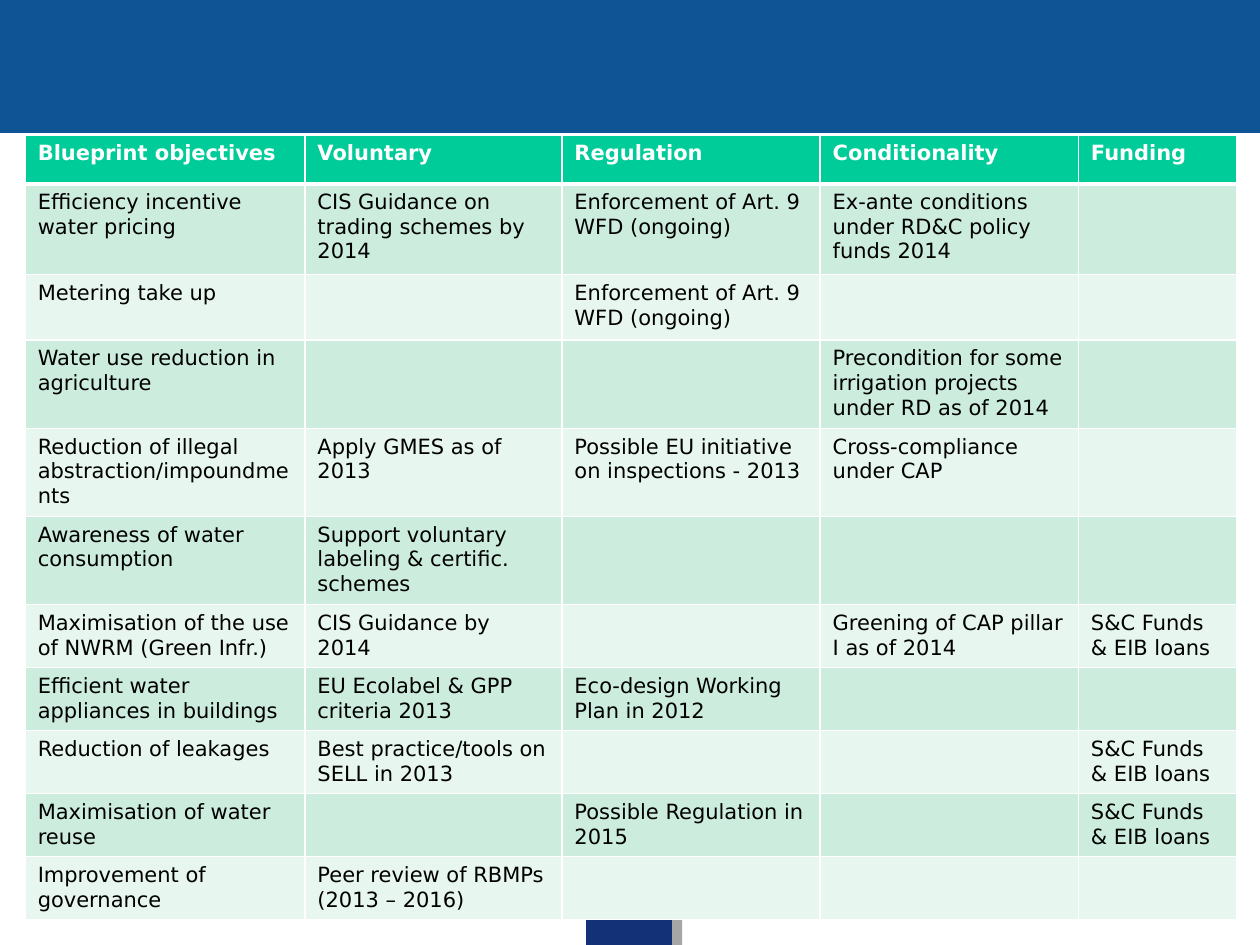
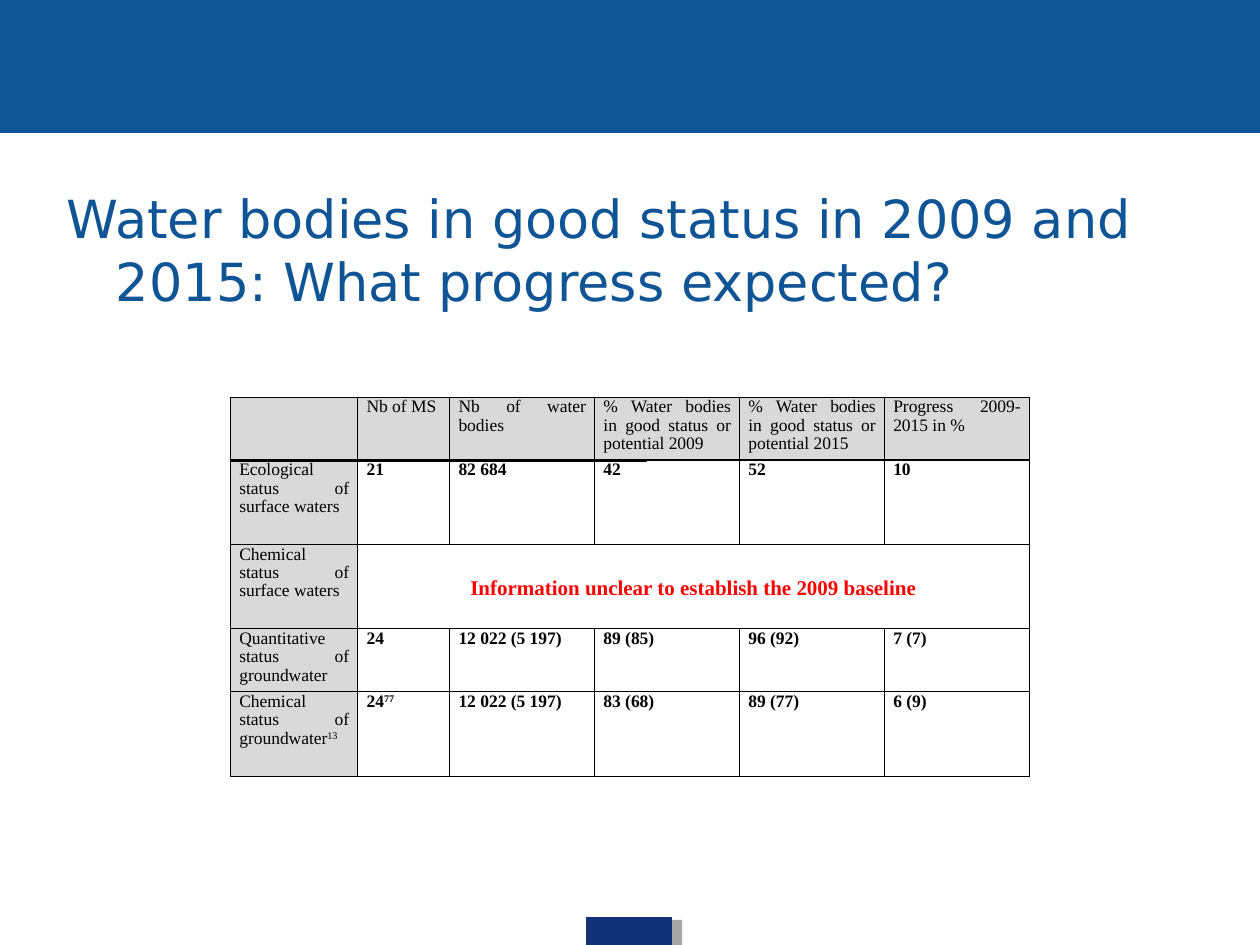
import pptx
import pptx.dml.color
import pptx.enum.shapes
import pptx.enum.text
import pptx.oxml
import pptx.oxml.ns
import pptx.util

Inches = pptx.util.Inches
Align = pptx.enum.text.PP_ALIGN
Anchor = pptx.enum.text.MSO_ANCHOR

COLORS = {
    "band": "0F5494", "footer": "133176", "white": "FFFFFF", "black": "000000",
    "header": "00CC99", "odd_row": "CCECDE", "even_row": "E7F6EF",
    "label": "D9D9D9", "warning": "FF0000",
}
SANS, SERIF = "DejaVu Sans", "Times New Roman"
TITLE_ONLY, BLANK = 5, 6

OBJECTIVE_WIDTHS = [2.22, 2.04, 2.05, 2.05, 1.26]
OBJECTIVE_HEIGHTS = [0.39, 0.72, 0.52] + [0.7] * 3 + [0.5] * 5
OBJECTIVES = [
    ["Blueprint objectives", "Voluntary", "Regulation", "Conditionality", "Funding"],
    ["Efficiency incentive water pricing", "CIS Guidance on trading schemes by 2014",
     "Enforcement of Art. 9 WFD (ongoing)",
     "Ex-ante conditions under RD&C policy funds 2014", ""],
    ["Metering take up", "", "Enforcement of Art. 9 WFD (ongoing)", "", ""],
    ["Water use reduction in agriculture", "", "",
     "Precondition for some irrigation projects under RD as of 2014", ""],
    ["Reduction of illegal abstraction/impoundments", "Apply GMES as of 2013",
     "Possible EU initiative on inspections - 2013", "Cross-compliance under CAP", ""],
    ["Awareness of water consumption",
     "Support voluntary labeling & certific. schemes", "", "", ""],
    ["Maximisation of the use of NWRM (Green Infr.)", "CIS Guidance by 2014", "",
     "Greening of CAP pillar I as of 2014", "S&C Funds & EIB loans"],
    ["Efficient water appliances in buildings", "EU Ecolabel & GPP criteria 2013",
     "Eco-design Working Plan in 2012", "", ""],
    ["Reduction of leakages", "Best practice/tools on SELL in 2013", "", "",
     "S&C Funds & EIB loans"],
    ["Maximisation of water reuse", "", "Possible Regulation in 2015", "",
     "S&C Funds & EIB loans"],
    ["Improvement of governance", "Peer review of RBMPs (2013 – 2016)", "", "", ""],
]

# A caret starts a superscript
STATUS_WIDTHS = [1.01, 0.73] + [1.15] * 4
STATUS_HEIGHTS = [0.5, 0.67, 0.67, 0.5, 0.67]
UNCLEAR_ROW = 2
STATUS = [
    ["", "Nb of MS", "Nb of water bodies",
     "% Water bodies in good status or potential 2009",
     "% Water bodies in good status or potential 2015", "Progress 2009-2015 in %"],
    ["Ecological status of surface waters", "21", "82 684", "42", "52", "10"],
    ["Chemical status of surface waters",
     "Information unclear to establish the 2009 baseline"],
    ["Quantitative status of groundwater", "24", "12 022 (5 197)",
     "89 (85)", "96 (92)", "7 (7)"],
    ["Chemical status of groundwater^13", "24^77", "12 022 (5 197)",
     "83 (68)", "89 (77)", "6 (9)"],
]


def color(name):
    return pptx.dml.color.RGBColor.from_string(COLORS[name])


def apply_format(target, values):
    for name, value in values.items():
        setattr(target, name, value)


def format_font(font, color_name, **values):
    apply_format(font, values)
    font.color.rgb = color(color_name)


def add_bar(slide, left, top, width, height, color_name):
    shape = slide.shapes.add_shape(
        pptx.enum.shapes.MSO_SHAPE.RECTANGLE,
        Inches(left), Inches(top), Inches(width), Inches(height))
    shape.shadow.inherit = False
    shape.fill.solid()
    shape.fill.fore_color.rgb = color(color_name)
    shape.line.color.rgb = color(color_name)
    shape.line.width = pptx.util.Pt(0.75)
    return shape


def add_hard_shadow(shape):
    effects = shape._element.spPr.find(pptx.oxml.ns.qn("a:effectLst"))
    effects.append(pptx.oxml.parse_xml(
        f'<a:outerShdw {pptx.oxml.ns.nsdecls("a")} blurRad="0" dist="76200" '
        f'dir="1080000" rotWithShape="0"><a:srgbClr val="{COLORS["black"]}">'
        '<a:alpha val="35000"/></a:srgbClr></a:outerShdw>'))


def add_slide(presentation, layout):
    """Add a slide with the top band and the footer block."""
    slide = presentation.slides.add_slide(presentation.slide_layouts[layout])
    add_bar(slide, 0, 0, 10, 1.05, "band")
    add_hard_shadow(add_bar(slide, 4.66, 7.28, 0.67, 0.22, "footer"))
    return slide


def set_title(slide, text):
    title = slide.shapes.title
    apply_format(title, {"left": Inches(0.43), "top": Inches(1.43),
                         "width": Inches(9.29), "height": Inches(1.1)})
    frame = title.text_frame
    apply_format(frame, {"text": text, "word_wrap": True,
                         "vertical_anchor": Anchor.MIDDLE,
                         "auto_size": pptx.enum.text.MSO_AUTO_SIZE.NONE})
    paragraph = frame.paragraphs[0]
    paragraph.alignment = Align.LEFT
    properties = paragraph._p.get_or_add_pPr()
    properties.set("marL", str(Inches(0.39)))
    properties.set("indent", str(-Inches(0.39)))
    format_font(paragraph.runs[0].font, "band", name=SANS, size=pptx.util.Pt(30))


def add_grid(slide, left, top, widths, heights):
    table = slide.shapes.add_table(
        len(heights), len(widths), Inches(left), Inches(top),
        Inches(sum(widths)), Inches(sum(heights))).table
    apply_format(table, {"first_row": False, "horz_banding": False})
    for column, width in zip(table.columns, widths):
        column.width = Inches(width)
    for row, height in zip(table.rows, heights):
        row.height = Inches(height)
    return table


def set_cell_fill(cell, color_name):
    if color_name:
        cell.fill.solid()
        cell.fill.fore_color.rgb = color(color_name)
    else:
        cell.fill.background()


def set_borders(cell, color_name, widths):
    """Draw the left, right, top and bottom borders, widths in points."""
    properties = cell._tc.get_or_add_tcPr()
    for position, (side, width) in enumerate(zip("LRTB", widths)):
        properties.insert(position, pptx.oxml.parse_xml(
            f'<a:ln{side} {pptx.oxml.ns.nsdecls("a")} w="{pptx.util.Pt(width)}">'
            f'<a:solidFill><a:srgbClr val="{COLORS[color_name]}"/></a:solidFill>'
            f'</a:ln{side}>'))


def write_cell(cell, text, color_name, **font_values):
    paragraph = cell.text_frame.paragraphs[0]
    for index, part in enumerate(text.split("^")):
        run = paragraph.add_run()
        run.text = part
        format_font(run.font, color_name, **font_values)
        if index:
            run._r.get_or_add_rPr().set("baseline", "30000")
    return paragraph


def add_objectives_table(slide):
    table = add_grid(slide, 0.2, 1.07, OBJECTIVE_WIDTHS, OBJECTIVE_HEIGHTS)
    for row, texts in enumerate(OBJECTIVES):
        is_header = row == 0
        fill = "header" if is_header else ("even_row", "odd_row")[row % 2]
        for column, text in enumerate(texts):
            cell = table.cell(row, column)
            set_cell_fill(cell, fill)
            set_borders(cell, "white",
                        (1, 1, 3 if row == 1 else 1, 3 if is_header else 1))
            if text:
                write_cell(cell, text, "white" if is_header else "black",
                           name=SANS, size=pptx.util.Pt(12), bold=is_header)


def status_border_widths(row, column):
    """Heavier rules frame the first results and the unclear row."""
    def rule_above(line):
        heavy = (line == 1 and column >= 3) or (line == 3 and column >= 1)
        return 1 if heavy else 0.45
    heavy_right = (row == 1 and column == 5) or (row == UNCLEAR_ROW and column >= 1)
    return 0.45, 1 if heavy_right else 0.45, rule_above(row), rule_above(row + 1)


def add_status_table(slide):
    table = add_grid(slide, 1.83, 3.15, STATUS_WIDTHS, STATUS_HEIGHTS)
    table.cell(UNCLEAR_ROW, 1).merge(table.cell(UNCLEAR_ROW, 5))
    for row, texts in enumerate(STATUS):
        for column, text in enumerate(texts):
            cell = table.cell(row, column)
            is_label = row == 0 or column == 0
            is_warning = row == UNCLEAR_ROW and column == 1
            apply_format(cell, {
                "margin_left": Inches(0.07), "margin_right": Inches(0.07),
                "margin_top": Inches(0.01), "margin_bottom": 0,
                "vertical_anchor": Anchor.MIDDLE if is_warning else Anchor.TOP})
            set_cell_fill(cell, "label" if is_label else None)
            set_borders(cell, "black", status_border_widths(row, column))
            if text:
                paragraph = write_cell(
                    cell, text, "warning" if is_warning else "black", name=SERIF,
                    size=pptx.util.Pt(12 if is_warning else 10), bold=not is_label)
                apply_format(paragraph, {
                    "alignment": Align.CENTER if is_warning else Align.JUSTIFY,
                    "line_spacing": 1.15 if is_warning else 0.95})


def main():
    presentation = pptx.Presentation()
    apply_format(presentation, {"slide_width": Inches(10), "slide_height": Inches(7.5)})

    # Blueprint objectives
    add_objectives_table(add_slide(presentation, BLANK))

    # Status of water bodies
    slide = add_slide(presentation, TITLE_ONLY)
    set_title(slide, "Water bodies in good status in 2009 and 2015: "
                     "What progress expected?")
    add_status_table(slide)
    add_bar(slide, 1.83, 3.65, 3.3, 0.01, "black")

    presentation.save("out.pptx")


if __name__ == "__main__":
    main()
